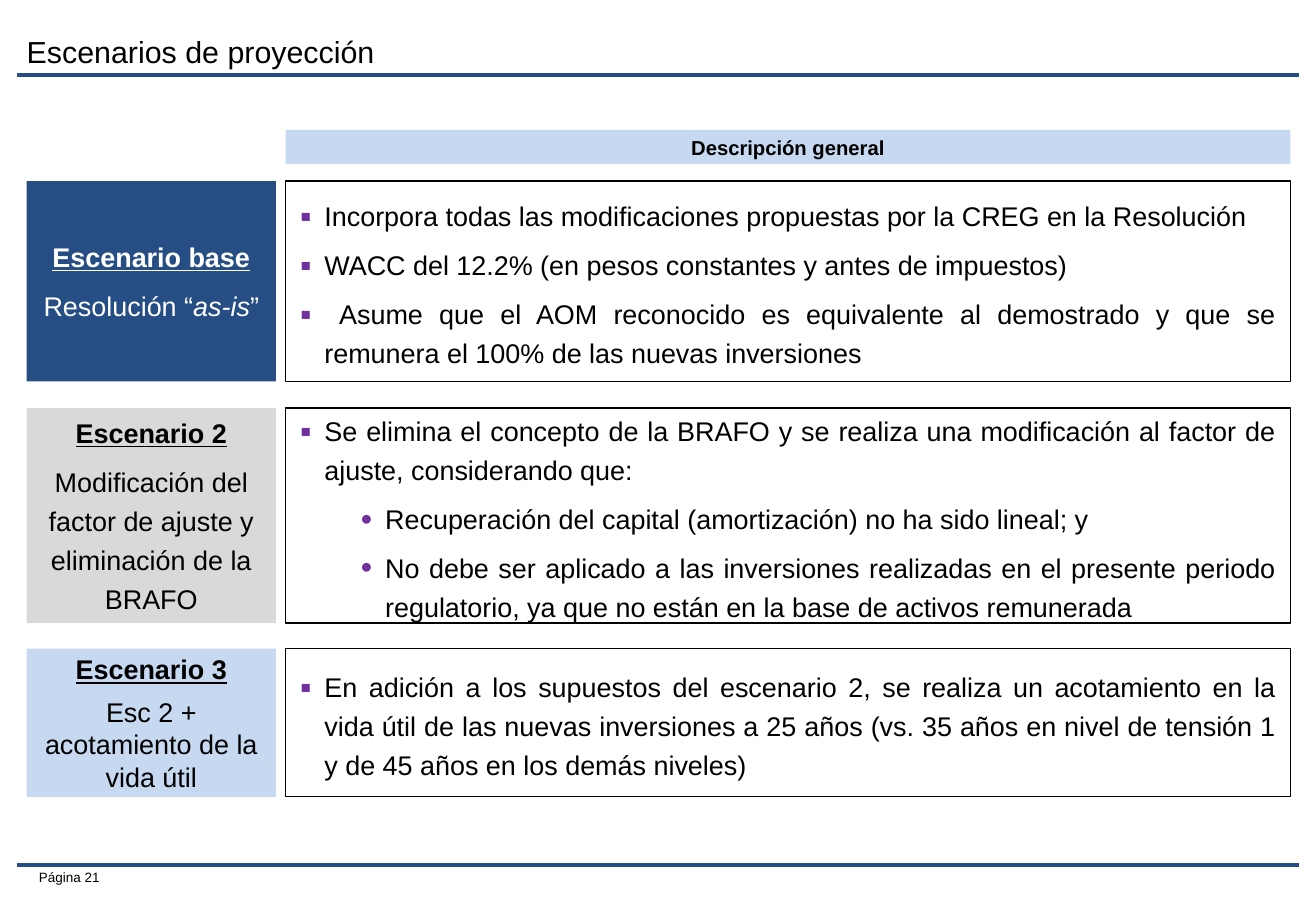
from lxml import etree
from pptx import Presentation, util as u
from pptx.dml.color import RGBColor
from pptx.enum import shapes, text
from pptx.oxml.ns import qn

NAVY, GRAY, SKY = "264E84", "D9D9D9", "C6D9F1"
BLACK, WHITE, PURPLE = "000000", "FFFFFF", "7030A0"
ALIGN, ANCHOR = text.PP_ALIGN, text.MSO_ANCHOR

TITLE = "Escenarios de proyección"
HEADER = "Descripción general"
PAGE = "Página 21"

# Each scenario: name, summary runs (text, italic), summary line spacing,
# fill, text colour, top, height, bullets (level, text)
SCENARIOS = [
    ("Escenario base", [("Resolución “", False), ("as-is", True), ("”", False)],
     1.2, NAVY, WHITE, 1.49, 1.65, [
        (0, "Incorpora todas las modificaciones propuestas por la CREG en la Resolución"),
        (0, "WACC del 12.2% (en pesos constantes y antes de impuestos)"),
        (0, " Asume que el AOM reconocido es equivalente al demostrado y que se "
            "remunera el 100% de las nuevas inversiones"),
     ]),
    ("Escenario 2",
     [("Modificación del factor de ajuste y eliminación de la BRAFO", False)],
     1.2, GRAY, BLACK, 3.36, 1.77, [
        (0, "Se elimina el concepto de la BRAFO y se realiza una modificación al "
            "factor de ajuste, considerando que:"),
        (2, "Recuperación del capital (amortización) no ha sido lineal; y"),
        (2, "No debe ser aplicado a las inversiones realizadas en el presente periodo "
            "regulatorio, ya que no están en la base de activos remunerada"),
     ]),
    ("Escenario 3", [("Esc 2 + acotamiento de la vida útil", False)],
     1.0, SKY, BLACK, 5.34, 1.22, [
        (0, "En adición a los supuestos del escenario 2, se realiza un acotamiento en "
            "la vida útil de las nuevas inversiones a 25 años (vs. 35 años en nivel de "
            "tensión 1 y de 45 años en los demás niveles)"),
     ]),
]
BULLETS = {0: ("▪", 0.2), 2: ("•", 0.7)}  # level: character, left margin
HANGING = 0.2

# Columns and rules
NAME_LEFT, NAME_WIDTH = 0.22, 2.05
BODY_LEFT, BODY_WIDTH = 2.35, 8.27
RULE_LEFT, RULE_WIDTH, RULE_TOPS = 0.14, 10.55, (0.62, 7.12)


def color(hex_string):
    return RGBColor.from_string(hex_string)


def add_run(paragraph, words, size=16, fill=BLACK, bold=False, italic=False,
            underline=False):
    run = paragraph.add_run()
    run.text = words
    font = run.font
    font.name, font.size, font.color.rgb = "Arial", u.Pt(size), color(fill)
    font.bold, font.italic, font.underline = bold, italic, underline


def set_paragraph(paragraph, align=ALIGN.CENTER, spacing=1.0, after=6):
    paragraph.alignment = align
    paragraph.line_spacing = spacing
    paragraph.space_after = u.Pt(after)
    return paragraph


def set_frame(frame, anchor=ANCHOR.MIDDLE, insets=(0.1, 0.05), wrap=True):
    frame.word_wrap, frame.vertical_anchor = wrap, anchor
    frame.auto_size = text.MSO_AUTO_SIZE.NONE
    frame.margin_left = frame.margin_right = u.Inches(insets[0])
    frame.margin_top = frame.margin_bottom = u.Inches(insets[1])
    return frame


def add_box(left, top, width, height, fill=None, line=None):
    box = slide.shapes.add_shape(shapes.MSO_SHAPE.RECTANGLE, u.Inches(left),
                                 u.Inches(top), u.Inches(width), u.Inches(height))
    box.shadow.inherit = False
    if fill:
        box.fill.solid()
        box.fill.fore_color.rgb = color(fill)
    else:
        box.fill.background()
    if line:
        box.line.color.rgb, box.line.width = color(line), u.Pt(0.75)
    else:
        box.line.fill.background()
    return box


def add_rule(top):
    rule = slide.shapes.add_connector(
        shapes.MSO_CONNECTOR.STRAIGHT, u.Inches(RULE_LEFT), u.Inches(top),
        u.Inches(RULE_LEFT + RULE_WIDTH), u.Inches(top))
    rule.line.color.rgb, rule.line.width = color(NAVY), u.Pt(2.25)
    etree.SubElement(rule._element.spPr, qn("a:effectLst"))


def set_bullet(paragraph, level):
    character, margin = BULLETS[level]
    paragraph.level = level
    properties = paragraph._p.get_or_add_pPr()
    properties.set("marL", str(u.Inches(margin)))
    properties.set("indent", str(-u.Inches(HANGING)))
    bullet_color = etree.SubElement(properties, qn("a:buClr"))
    etree.SubElement(bullet_color, qn("a:srgbClr"), val=PURPLE)
    etree.SubElement(properties, qn("a:buSzPct"), val="120000")
    etree.SubElement(properties, qn("a:buFont"), typeface="Arial")
    etree.SubElement(properties, qn("a:buChar"), char=character)


def next_paragraph(frame, index):
    return frame.add_paragraph() if index else frame.paragraphs[0]


presentation = Presentation()
presentation.slide_width, presentation.slide_height = u.Inches(10.83), u.Inches(7.5)
slide = presentation.slides.add_slide(presentation.slide_layouts[5])

# Title, rules and page number
title = slide.shapes.title
title.left, title.top = u.Inches(0.22), u.Inches(0.29)
title.width, title.height = u.Inches(9.16), u.Inches(0.5)
frame = set_frame(title.text_frame, ANCHOR.TOP, (0, 0.04))
add_run(set_paragraph(frame.paragraphs[0], ALIGN.LEFT, 0.8, 0), TITLE, size=18)

for rule_top in RULE_TOPS:
    add_rule(rule_top)

page = slide.shapes.add_textbox(u.Inches(0.14), u.Inches(7.1), u.Inches(0.78),
                                u.Inches(0.24))
frame = set_frame(page.text_frame, wrap=False)
add_run(set_paragraph(frame.paragraphs[0], ALIGN.RIGHT, after=0), PAGE, size=8)

# Column header
header = add_box(BODY_LEFT, 1.07, BODY_WIDTH, 0.28, fill=SKY)
frame = set_frame(header.text_frame)
add_run(set_paragraph(frame.paragraphs[0]), HEADER, size=12, bold=True)

# Scenario rows
for name, summary, spacing, fill, ink, top, height, points in SCENARIOS:
    name_box = add_box(NAME_LEFT, top, NAME_WIDTH, height, fill=fill)
    frame = set_frame(name_box.text_frame)
    add_run(set_paragraph(frame.paragraphs[0]), name, fill=ink, bold=True,
            underline=True)
    paragraph = set_paragraph(frame.add_paragraph(), spacing=spacing)
    for words, italic in summary:
        add_run(paragraph, words, fill=ink, italic=italic)

    body = add_box(BODY_LEFT, top, BODY_WIDTH, height, line=BLACK)
    frame = set_frame(body.text_frame, insets=(0.12, 0.03))
    for index, (level, words) in enumerate(points):
        paragraph = set_paragraph(next_paragraph(frame, index), ALIGN.JUSTIFY, 1.2)
        set_bullet(paragraph, level)
        add_run(paragraph, words)

presentation.save("out.pptx")
